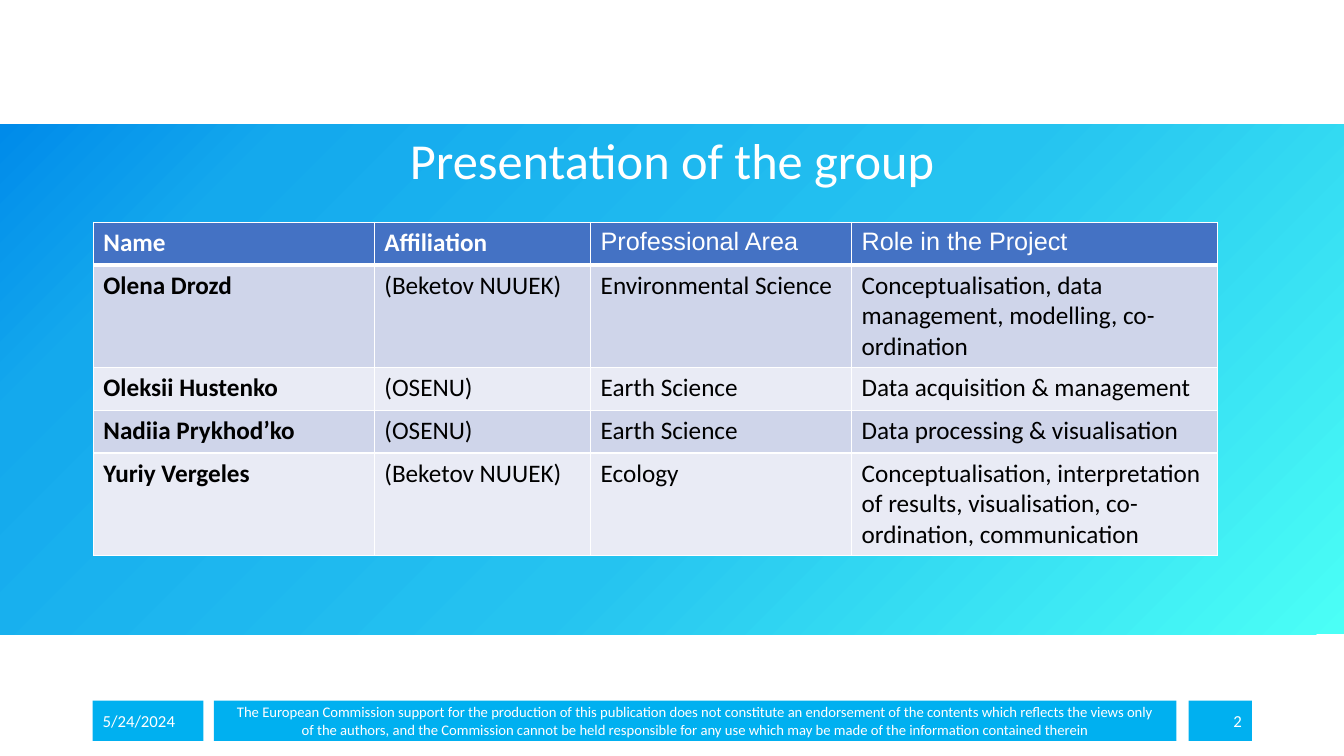
"""Build the slide that presents the project group."""
from lxml import etree
from pptx import Presentation
from pptx.dml.color import RGBColor
from pptx.enum import shapes, text
from pptx.oxml import ns
from pptx.util import Pt

TITLE = "Presentation of the group"
MEMBERS = [
    ("Name", "Affiliation", "Professional Area", "Role in the Project"),
    ("Olena Drozd", "(Beketov NUUEK)", "Environmental Science",
     "Conceptualisation, data management, modelling, co-ordination"),
    ("Oleksii Hustenko", "(OSENU)", "Earth Science", "Data acquisition & management"),
    ("Nadiia Prykhod’ko", "(OSENU)", "Earth Science", "Data processing & visualisation"),
    ("Yuriy Vergeles", "(Beketov NUUEK)", "Ecology",
     "Conceptualisation, interpretation of results, visualisation, "
     "co-ordination, communication"),
]
COLUMN_WIDTHS = [200.7, 154.5, 186.4, 261.4]
ROW_HEIGHTS = [30.6, 73, 30.6, 30.6, 73]
LEFT, CENTER, RIGHT = text.PP_ALIGN.LEFT, text.PP_ALIGN.CENTER, text.PP_ALIGN.RIGHT
FOOTERS = [
    (66.2, 79.2, LEFT, 12, ["5/24/2024"]),
    (152.8, 687.6, CENTER, 10.5, [
        "The European Commission support for the production of this publication does not "
        "constitute an endorsement of the contents which reflects the views only",
        "of the authors, and the Commission cannot be held responsible for any use "
        "which may be made of the information contained therein"]),
    (849, 45.2, RIGHT, 12, ["2"]),
]
BAND_STOPS = [(0, "4BFFF6"), (44, "25C3F0"), (84, "14A9ED"), (100, "008BEA")]
BAND_ANGLE = 225
WHITE, BLACK, FOOTER_BLUE, HEADER_BLUE = "FFFFFF", "000000", "00B0F0", "4472C4"
ROW_FILLS = ["E9EBF5", "CFD5EA"]


def paint(fill, color):
    fill.solid()
    fill.fore_color.rgb = RGBColor.from_string(color)


def write(paragraph, words, size, color, align=LEFT, font="Calibri", bold=False):
    paragraph.alignment = align
    run = paragraph.add_run()
    run.text = words
    run.font.name, run.font.size, run.font.bold = font, Pt(size), bold
    run.font.color.rgb = RGBColor.from_string(color)


def add_block(slide, left, top, width, height):
    block = slide.shapes.add_shape(
        shapes.MSO_SHAPE.RECTANGLE, Pt(left), Pt(top), Pt(width), Pt(height))
    block.shadow.inherit = False
    block.line.fill.background()
    return block


def add_band(slide):
    band = add_block(slide, 0, 88.6, 960, 364.3)
    band.fill.gradient()
    gradient = band.fill._fill._gradFill
    stops = gradient.find(ns.qn("a:gsLst"))
    for stop in list(stops):
        stops.remove(stop)
    for position, color in BAND_STOPS:
        stop = etree.SubElement(stops, ns.qn("a:gs"), pos=str(position * 1000))
        etree.SubElement(stop, ns.qn("a:srgbClr"), val=color)
    direction = gradient.find(ns.qn("a:lin"))
    direction.set("ang", str(BAND_ANGLE * 60000))
    direction.set("scaled", "0")


def add_title(slide):
    title = slide.shapes.add_textbox(Pt(66.2), Pt(88.6), Pt(828), Pt(51.1)).text_frame
    title.word_wrap = True
    title.vertical_anchor = text.MSO_ANCHOR.BOTTOM
    title.paragraphs[0].line_spacing = 0.9
    write(title.paragraphs[0], TITLE, 36, WHITE, CENTER)


def add_footer(slide, left, width, align, size, lines):
    footer = add_block(slide, left, 500.4, width, 28.8)
    paint(footer.fill, FOOTER_BLUE)
    frame = footer.text_frame
    frame.word_wrap = True
    frame.vertical_anchor = text.MSO_ANCHOR.MIDDLE
    for index, line in enumerate(lines):
        paragraph = frame.add_paragraph() if index else frame.paragraphs[0]
        write(paragraph, line, size, WHITE, align)


def add_borders(cell, row):
    properties = cell._tc.get_or_add_tcPr()
    widths = {"lnL": 1, "lnR": 1, "lnT": 3 if row == 1 else 1, "lnB": 3 if row == 0 else 1}
    for place, (side, width) in enumerate(widths.items()):
        border = etree.Element(ns.qn("a:" + side), w=str(Pt(width)))
        fill = etree.SubElement(border, ns.qn("a:solidFill"))
        etree.SubElement(fill, ns.qn("a:srgbClr"), val=WHITE)
        properties.insert(place, border)


def add_members(slide):
    members = slide.shapes.add_table(
        len(MEMBERS), len(COLUMN_WIDTHS), Pt(66.7), Pt(158.8),
        Pt(sum(COLUMN_WIDTHS)), Pt(sum(ROW_HEIGHTS))).table
    for column, width in zip(members.columns, COLUMN_WIDTHS):
        column.width = Pt(width)
    for row, (height, entries) in enumerate(zip(ROW_HEIGHTS, MEMBERS)):
        members.rows[row].height = Pt(height)
        header = row == 0
        for column, entry in enumerate(entries):
            cell = members.cell(row, column)
            paint(cell.fill, HEADER_BLUE if header else ROW_FILLS[row % 2])
            add_borders(cell, row)
            write(cell.text_frame.paragraphs[0], entry, 18, WHITE if header else BLACK,
                  font="Arial" if header and column > 1 else "Calibri",
                  bold=column == 0 or (header and column == 1))


def main():
    deck = Presentation()
    deck.slide_width, deck.slide_height = Pt(960), Pt(540)
    slide = deck.slides.add_slide(deck.slide_layouts[6])
    paint(slide.background.fill, WHITE)
    add_band(slide)
    add_title(slide)
    for footer in FOOTERS:
        add_footer(slide, *footer)
    add_members(slide)
    deck.save("out.pptx")


if __name__ == "__main__":
    main()
